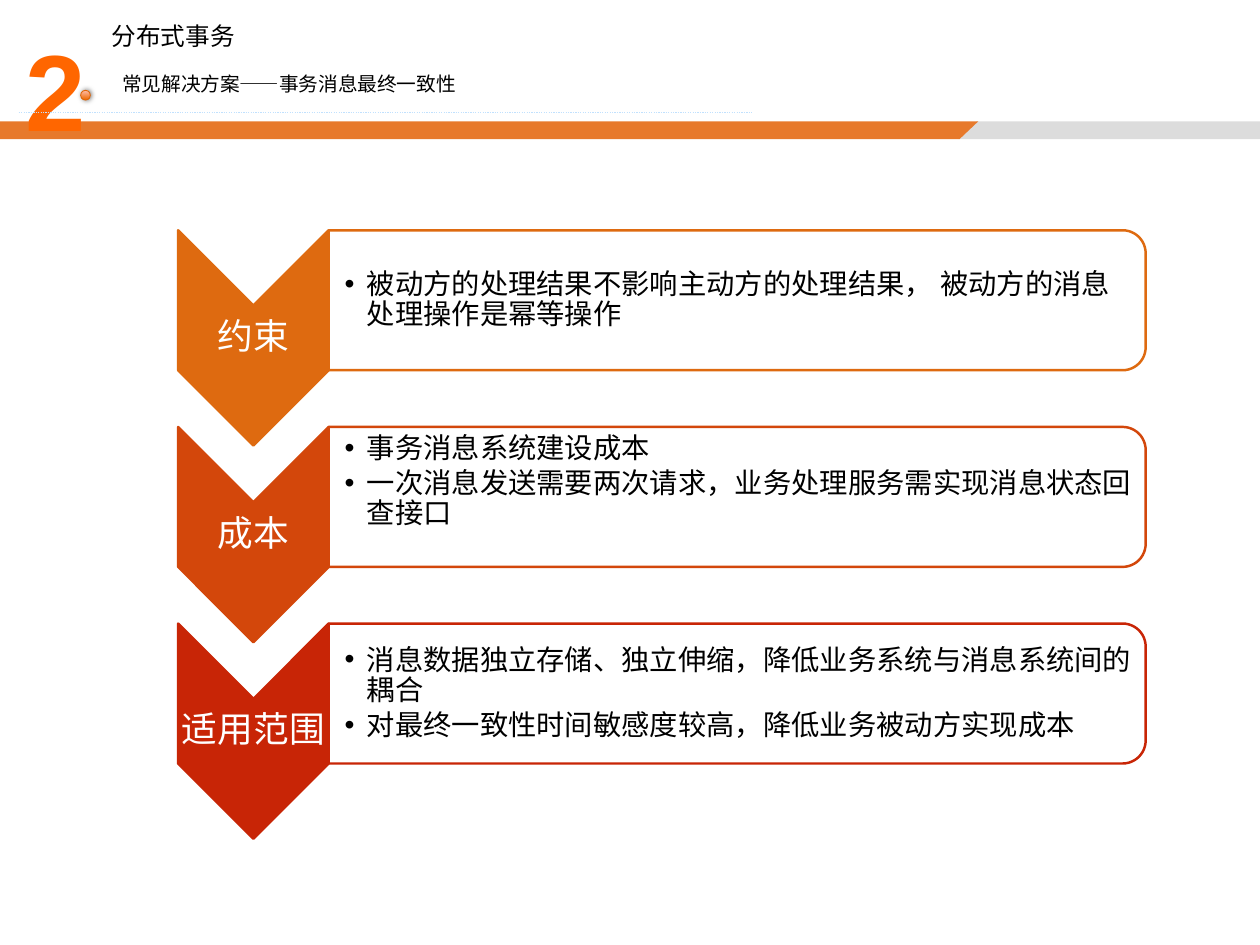
from dataclasses import dataclass
from math import cos, pi, sin

from lxml.etree import SubElement
from pptx import Presentation
from pptx.dml.color import RGBColor
from pptx.enum.dml import MSO_LINE_DASH_STYLE as Dash
from pptx.enum.shapes import MSO_CONNECTOR as Connector, MSO_SHAPE as Preset
from pptx.enum.text import MSO_ANCHOR as Anchor, MSO_AUTO_SIZE as AutoSize, PP_ALIGN as Align
from pptx.oxml.ns import qn
from pptx.util import Inches, Pt

WIDTH, HEIGHT = Inches(14.22), Inches(10.67)


@dataclass(frozen=True)
class Step:
    label: str
    color: str
    points: tuple[str, ...]
    bottom_inset: float = 0.09


@dataclass(frozen=True)
class TextStyle:
    size: float
    font: str
    color: str = "000000"
    bold: bool = False
    align: Align = Align.LEFT
    line_spacing: float = 1.0
    space_after: float = 0
    bullet: bool = False


STEPS = (
    Step("约束", "DE6A10", ("被动方的处理结果不影响主动方的处理结果， 被动方的消息处理操作是幂等操作",)),
    Step("成本", "D3470B", ("事务消息系统建设成本",
                          "一次消息发送需要两次请求，业务处理服务需实现消息状态回查接口"), 0.43),
    Step("适用范围", "C82506", ("消息数据独立存储、独立伸缩，降低业务系统与消息系统间的耦合",
                            "对最终一致性时间敏感度较高，降低业务被动方实现成本")),
)
LABEL = TextStyle(29, "Roboto", "FFFFFF", align=Align.CENTER, line_spacing=0.9)
POINTS = TextStyle(23, "Roboto", line_spacing=0.9, space_after=3.5, bullet=True)
NUMBER = TextStyle(88, "Arial", "FF6600", bold=True, align=Align.CENTER)
TITLE = TextStyle(20, "Noto Sans CJK SC")
SUBTITLE = TextStyle(16, "Noto Sans CJK JP")

# Step grid, in percent of the slide's width and height
FIRST_TOP, PITCH, FRAME_HEIGHT, NOTCH = 24.37, 20.81, 14.81, 7.97
CHEVRON_LEFT, FRAME_LEFT, FRAME_RIGHT = 14.14, 26.09, 90.93
CORNER_X, CORNER_Y = 1.83, 2.44
BAR_TOP, BAR_BOTTOM = 12.84, 14.71


def across(percent: float) -> int:
    return round(WIDTH * percent / 100)


def down(percent: float) -> int:
    return round(HEIGHT * percent / 100)


def area(left: float, top: float, width: float, height: float) -> tuple[int, int, int, int]:
    return across(left), down(top), across(width), down(height)


def rgb(color: str) -> RGBColor:
    return RGBColor.from_string(color)


def apply(target, **values) -> None:
    for name, value in values.items():
        setattr(target, name, value)


def write(shape, lines: tuple[str, ...], style: TextStyle, anchor=Anchor.TOP,
          insets=(0.1, 0.05, 0.1, 0.05), wrap: bool = True) -> None:
    frame = shape.text_frame
    left, top, right, bottom = map(Inches, insets)
    apply(frame, auto_size=AutoSize.NONE, word_wrap=wrap, vertical_anchor=anchor,
          margin_left=left, margin_top=top, margin_right=right, margin_bottom=bottom)
    for index, line in enumerate(lines):
        paragraph = frame.add_paragraph() if index else frame.paragraphs[0]
        apply(paragraph, alignment=style.align, line_spacing=style.line_spacing,
              space_before=Pt(0), space_after=Pt(style.space_after))
        properties = paragraph._p.get_or_add_pPr()
        indent = Inches(0.25) if style.bullet else 0
        properties.set("marL", str(indent))
        properties.set("indent", str(-indent))
        if style.bullet:
            SubElement(properties, qn("a:buFont"), typeface="Arial")
            SubElement(properties, qn("a:buChar"), char="•")
        else:
            SubElement(properties, qn("a:buNone"))
        run = paragraph.add_run()
        run.text = line
        apply(run.font, size=Pt(style.size), name=style.font, bold=style.bold)
        run.font.color.rgb = rgb(style.color)
        SubElement(run._r.get_or_add_rPr(), qn("a:ea"), typeface=style.font)


def outline(slide, corners: list[tuple[float, float]], fill: str, line: str | None = None):
    points = [(across(x), down(y)) for x, y in corners]
    builder = slide.shapes.build_freeform(*points[0], scale=1.0)
    builder.add_line_segments(points[1:], close=True)
    shape = builder.convert_to_shape()
    shape.shadow.inherit = False
    shape.fill.solid()
    shape.fill.fore_color.rgb = rgb(fill)
    if line:
        shape.line.color.rgb = rgb(line)
        shape.line.width = Pt(2)
    else:
        shape.line.fill.background()
    return shape


def draw_step(slide, step: Step, top: float) -> None:
    bottom = top + FRAME_HEIGHT
    middle = (CHEVRON_LEFT + FRAME_LEFT) / 2
    chevron = outline(slide, [(CHEVRON_LEFT, top), (middle, top + NOTCH), (FRAME_LEFT, top),
                              (FRAME_LEFT, bottom), (middle, bottom + NOTCH),
                              (CHEVRON_LEFT, bottom)], step.color, step.color)
    write(chevron, (step.label,), LABEL, Anchor.MIDDLE, (0.02, 0.87, 0.02, 0.87))

    # Frame with its two right corners rounded
    turns = [pi / 2 * part / 12 for part in range(13)]
    inner = FRAME_RIGHT - CORNER_X
    upper = [(inner + CORNER_X * sin(t), top + CORNER_Y * (1 - cos(t))) for t in turns]
    lower = [(x, top + bottom - y) for x, y in reversed(upper)]
    frame = outline(slide, [(FRAME_LEFT, top), *upper, *lower, (FRAME_LEFT, bottom)],
                    "FFFFFF", step.color)
    write(frame, step.points, POINTS, Anchor.MIDDLE, (0.18, 0.09, 0.09, step.bottom_inset))


def draw_header(slide) -> None:
    # Two-colour bar
    outline(slide, [(77.5, BAR_TOP), (100, BAR_TOP), (100, BAR_BOTTOM), (76.09, BAR_BOTTOM)], "DCDCDC")
    outline(slide, [(0, BAR_TOP), (77.64, BAR_TOP), (76.16, BAR_BOTTOM), (0, BAR_BOTTOM)], "E7792B")

    # Chapter number
    number = slide.shapes.add_textbox(*area(1.62, -2.53, 5.63, 16.59))
    write(number, ("2",), NUMBER, insets=(0, 0.53, 0, 0))

    # Title and subtitle
    title, subtitle = slide.shapes.title, slide.placeholders[1]
    for heading, text, style, place in (
        (title, "分布式事务", TITLE, area(8.16, 1.69, 11.25, 7.22)),
        (subtitle, "常见解决方案——事务消息最终一致性", SUBTITLE, area(9, 7.12, 40.01, 3.47)),
    ):
        apply(heading, **dict(zip(("left", "top", "width", "height"), place)))
        write(heading, (text,), style, wrap=heading is subtitle)

    # Glossy dot
    dot = slide.shapes.add_shape(Preset.OVAL, *area(6.4, 9.56, 0.77, 1.03))
    dot.fill.gradient()
    dot.fill.gradient_angle = 90
    for stop, color in zip(dot.fill.gradient_stops, ("EE6800", "FFBEAD")):
        stop.color.rgb = rgb(color)
    dot.line.color.rgb = rgb("DE670B")
    dot.line.width = Pt(0.75)
    dot.shadow.inherit = False
    effects = dot._element.spPr.find(qn("a:effectLst"))
    shadow = SubElement(effects, qn("a:outerShdw"), blurRad=str(Pt(4)), dist=str(Pt(1)), dir="0")
    shade = SubElement(shadow, qn("a:srgbClr"), val="000000")
    SubElement(shade, qn("a:alpha"), val="50000")

    # Dotted rule
    rule = slide.shapes.add_connector(Connector.STRAIGHT, across(1.48), down(11.9),
                                      across(59.63), down(11.9))
    rule.line.color.rgb = rgb("C1E1FE")
    apply(rule.line, width=Pt(1), dash_style=Dash.ROUND_DOT)
    SubElement(rule._element.spPr, qn("a:effectLst"))


def main() -> None:
    deck = Presentation()
    apply(deck, slide_width=WIDTH, slide_height=HEIGHT)
    slide = deck.slides.add_slide(deck.slide_layouts[1])
    draw_header(slide)
    for row, step in enumerate(STEPS):
        draw_step(slide, step, FIRST_TOP + row * PITCH)
    deck.save("out.pptx")


if __name__ == "__main__":
    main()
